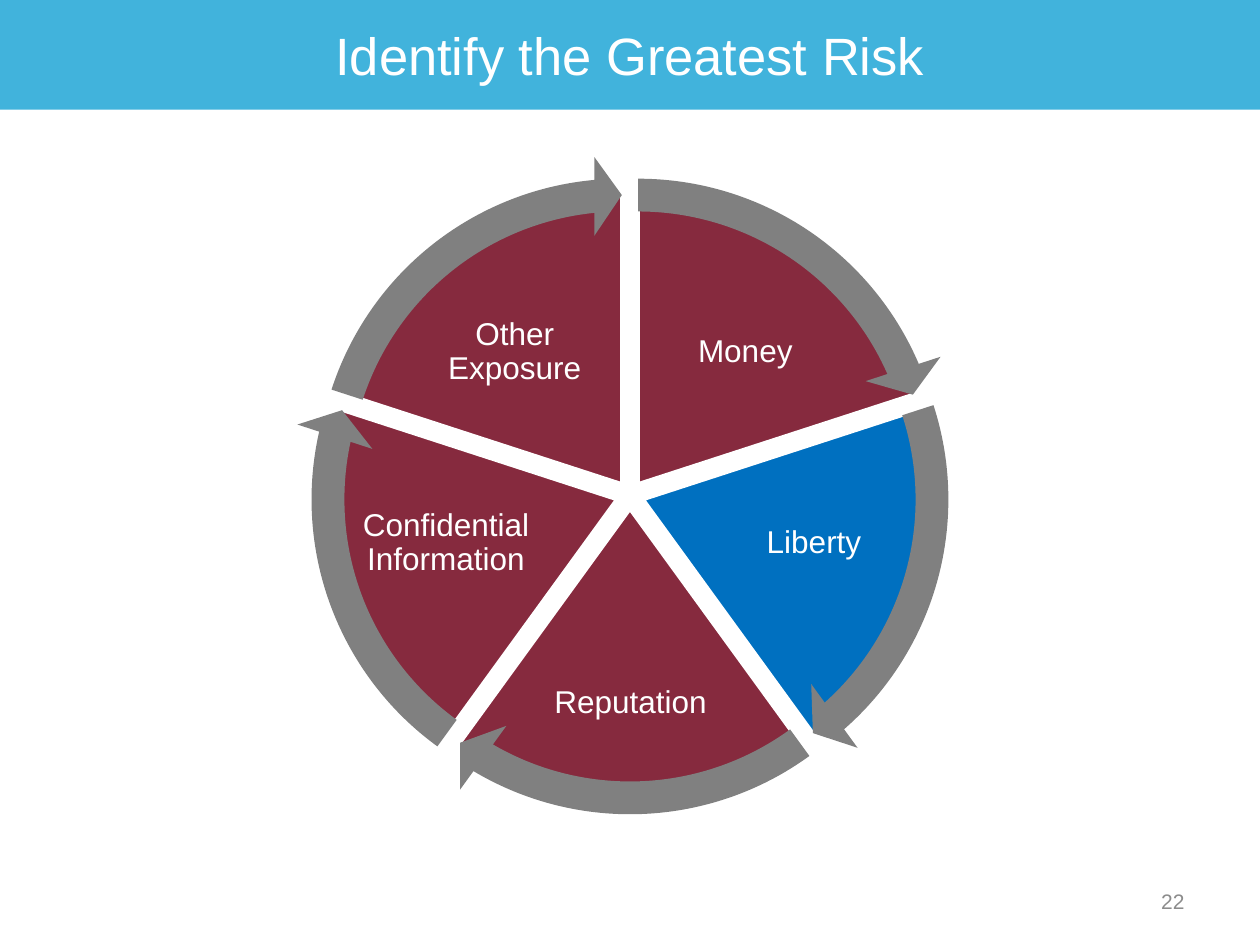
import math
from pptx import Presentation, util as u
from pptx.dml.color import RGBColor
from pptx.enum import shapes, text

MID_X, MID_Y = 5, 3.93      # hub of the wheel
PUSH = 0.11                 # each slice moves out from the hub
PIE, RING = 4.64, 5.21      # diameters of slices and arrows
STEP = 360 / 5
UNIT = 0.6                  # one degree in adjustment units
HEAD = 3.275                # angle taken by an arrowhead

WHITE, RED, BLUE, GRAY = "FFFFFF", "862A3E", "0070C0", "808080"

# Clockwise from the top: label, slice colour, label box
RISKS = [
    ("Money", RED, (5.17, 2.3, 1.49, 0.99)),
    ("Liberty", BLUE, (5.77, 3.76, 1.38, 1.1)),
    ("Reputation", RED, (4.34, 4.98, 1.33, 1.21)),
    ("Confidential Information", RED, (2.85, 3.76, 1.38, 1.1)),
    ("Other Exposure", RED, (3.34, 2.3, 1.49, 0.99)),
]


def color(code):
    return RGBColor.from_string(code)


def place(box):
    return [u.Inches(v) for v in box]


def style(frame, words, size, code, align):
    frame.text = words
    frame.word_wrap = True
    frame.vertical_anchor = text.MSO_ANCHOR.MIDDLE
    para = frame.paragraphs[0]
    para.alignment = align
    font = para.runs[0].font
    font.name, font.size = "Arial", u.Pt(size)
    font.color.rgb = color(code)
    return para


def add_shape(slide, kind, box, fill, edge=None):
    shape = slide.shapes.add_shape(kind, *place(box))
    shape.shadow.inherit = False
    shape.fill.solid()
    shape.fill.fore_color.rgb = color(fill)
    if edge:
        shape.line.color.rgb = color(edge)
        shape.line.width = u.Pt(2)
    else:
        shape.line.fill.background()
    return shape


def add_round(slide, kind, turn, size, values, fill, edge=None):
    """Add a slice or arrow, moved out along the middle of its sector."""
    mid = math.radians(270 + (turn + 0.5) * STEP)
    left = MID_X + PUSH * math.cos(mid) - size / 2
    top = MID_Y + PUSH * math.sin(mid) - size / 2
    shape = add_shape(slide, kind, (left, top, size, size), fill, edge)
    for i, value in enumerate(values):
        shape.adjustments[i] = value


def add_text(slide, box, words, size, code, align):
    frame = slide.shapes.add_textbox(*place(box)).text_frame
    return frame, style(frame, words, size, code, align)


def add_label(slide, box, words):
    frame, para = add_text(slide, box, words, 18, WHITE,
                           text.PP_ALIGN.CENTER)
    frame.margin_left = frame.margin_right = u.Inches(0.03)
    frame.margin_top = frame.margin_bottom = u.Inches(0.03)
    para.line_spacing = 0.9


def add_title(slide, words):
    band = add_shape(slide, shapes.MSO_SHAPE.RECTANGLE,
                     (0, 0, 10, 0.87), "41B3DC")
    title = slide.shapes.title
    title._element.addprevious(band._element)
    title.left, title.top, title.width, title.height = place((0.5, 0, 9, 0.87))
    style(title.text_frame, words, 30, WHITE, text.PP_ALIGN.CENTER)


def main():
    deck = Presentation()
    deck.slide_width, deck.slide_height = u.Inches(10), u.Inches(7.5)
    slide = deck.slides.add_slide(deck.slide_layouts[5])
    add_title(slide, "Identify the Greatest Risk")

    # Start and end angle of each sector
    spans = [((270 + i * STEP) % 360 * UNIT, (270 + (i + 1) * STEP) % 360 * UNIT)
             for i in range(len(RISKS))]

    # Slices with their labels
    for i, (words, fill, box) in enumerate(RISKS):
        add_round(slide, shapes.MSO_SHAPE.PIE, i, PIE, spans[i], fill, WHITE)
        add_label(slide, box, words)

    # Ring of arrows
    for i, (start, end) in enumerate(spans):
        add_round(slide, shapes.MSO_SHAPE.CIRCULAR_ARROW, i, RING,
                  (0.05, HEAD, end - HEAD, start, 0.06), GRAY)

    # Slide number
    add_text(slide, (7.17, 6.95, 2.33, 0.4), "22", 12, "8C8C8C",
             text.PP_ALIGN.RIGHT)
    deck.save("out.pptx")


if __name__ == "__main__":
    main()
